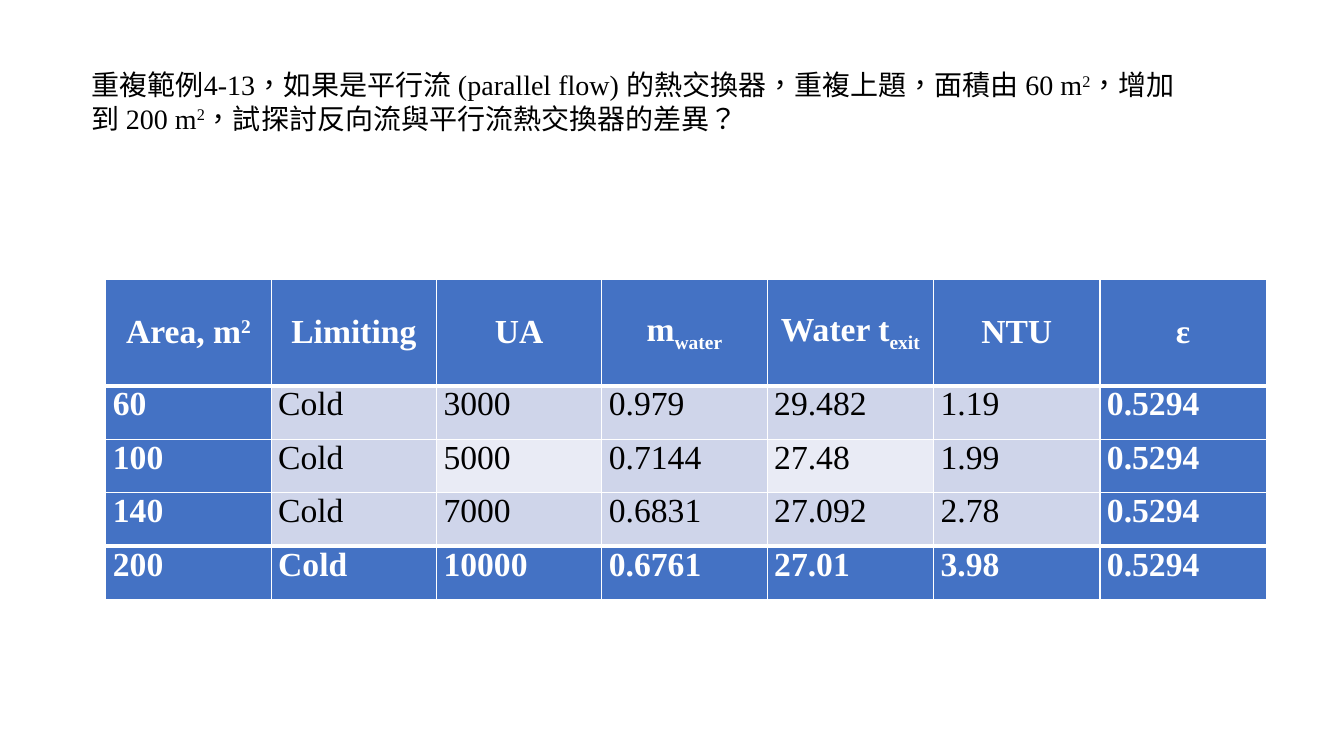
"""Build a slide comparing parallel-flow heat exchanger areas in a table."""
from dataclasses import dataclass

from lxml import etree
from pptx import Presentation
from pptx import util as u
from pptx.dml.color import RGBColor
from pptx.enum import text
from pptx.oxml.ns import qn

PX = 9144
COLORS = {"accent": "4472C4", "band": "CFD5EA", "pale": "E9EBF5",
          "white": "FFFFFF", "black": "000000"}
LATIN = "Times New Roman"
CHINESE = "Noto Sans CJK SC"
SUPER, SUB = 30000, -25000
THIN, THICK = 1, 3


@dataclass(frozen=True)
class Span:
    words: str
    face: str = LATIN
    shift: int = 0


@dataclass(frozen=True)
class Style:
    size: int
    color: str
    bold: bool = False


QUESTION = [
    Span("重複範例", CHINESE), Span("4-13"),
    Span("，如果是平行流 ", CHINESE), Span("(parallel flow) "),
    Span("的熱交換器，重複上題，面積由 ", CHINESE),
    Span("60 m"), Span("2", shift=SUPER), Span("，增加到 ", CHINESE),
    Span("200 m"), Span("2", shift=SUPER),
    Span("，試探討反向流與平行流熱交換器的差異？", CHINESE),
]
HEADINGS = [
    [Span("Area, m"), Span("2", shift=SUPER)],
    [Span("Limiting")],
    [Span("UA")],
    [Span("m"), Span("water", shift=SUB)],
    [Span("Water t"), Span("exit", shift=SUB)],
    [Span("NTU")],
    [Span("ε")],
]
RESULTS = [
    ("60", "Cold", "3000", "0.979", "29.482", "1.19", "0.5294"),
    ("100", "Cold", "5000", "0.7144", "27.48", "1.99", "0.5294"),
    ("140", "Cold", "7000", "0.6831", "27.092", "2.78", "0.5294"),
    ("200", "Cold", "10000", "0.6761", "27.01", "3.98", "0.5294"),
]
COLUMN_WIDTHS = [164] * 4 + [165] * 3
ROW_HEIGHTS = [106] + [53] * len(RESULTS)
PALE_CELLS = {(2, 2), (2, 4)}


def px(count: int) -> u.Emu:
    """Convert slide pixels to EMU."""
    return u.Emu(count * PX)


def rgb(name: str) -> RGBColor:
    """Look up a named colour."""
    return RGBColor.from_string(COLORS[name])


def write_spans(para, spans: list[Span], style: Style) -> None:
    """Add formatted runs to a paragraph."""
    for span in spans:
        run = para.add_run()
        run.text = span.words
        run.font.name = span.face
        run.font.size = u.Pt(style.size)
        run.font.bold = style.bold
        run.font.color.rgb = rgb(style.color)
        props = run.font._element
        if span.shift:
            props.set("baseline", str(span.shift))
        if span.face == CHINESE:
            props.set("lang", "zh-TW")
            etree.SubElement(props, qn("a:ea"), typeface=CHINESE)


def set_borders(cell, top: int, bottom: int) -> None:
    """Draw white cell borders with the given top and bottom widths."""
    props = cell._tc.get_or_add_tcPr()
    for side, width in (("L", THIN), ("R", THIN), ("T", top), ("B", bottom)):
        line = etree.SubElement(props, qn(f"a:ln{side}"), w=str(u.Pt(width)))
        fill = etree.SubElement(line, qn("a:solidFill"))
        etree.SubElement(fill, qn("a:srgbClr"), val=COLORS["white"])


def add_question(page) -> None:
    """Place the exercise text."""
    box = page.shapes.add_textbox(px(81), px(62), px(1114), px(77))
    frame = box.text_frame
    frame.word_wrap = True
    frame.auto_size = text.MSO_AUTO_SIZE.SHAPE_TO_FIT_TEXT
    frame.vertical_anchor = text.MSO_ANCHOR.MIDDLE
    write_spans(frame.paragraphs[0], QUESTION, Style(20, "black"))


def add_results(page) -> None:
    """Place the table of exchanger results."""
    rows = [HEADINGS] + [[[Span(value)] for value in row] for row in RESULTS]
    last_row, last_column = len(rows) - 1, len(HEADINGS) - 1
    table = page.shapes.add_table(
        len(rows), len(HEADINGS), px(105), px(277),
        px(sum(COLUMN_WIDTHS)), px(sum(ROW_HEIGHTS))).table
    table.first_row = table.horz_banding = False
    for column, width in zip(table.columns, COLUMN_WIDTHS):
        column.width = px(width)
    for row, height in zip(table.rows, ROW_HEIGHTS):
        row.height = px(height)
    for r, row in enumerate(rows):
        for c, spans in enumerate(row):
            cell = table.cell(r, c)
            strong = r in (0, last_row) or c in (0, last_column)
            set_borders(cell, THICK if r in (1, last_row) else THIN,
                        THICK if r in (0, last_row - 1) else THIN)
            cell.fill.solid()
            plain = "pale" if (r, c) in PALE_CELLS else "band"
            cell.fill.fore_color.rgb = rgb("accent" if strong else plain)
            cell.margin_left = cell.margin_right = px(7)
            cell.margin_top = cell.margin_bottom = 0
            para = cell.text_frame.paragraphs[0]
            if r == 0:
                cell.vertical_anchor = text.MSO_ANCHOR.MIDDLE
                para.alignment = text.PP_ALIGN.CENTER
            write_spans(para, spans,
                        Style(24, "white" if strong else "black", strong))


def main() -> None:
    """Build and save the deck."""
    deck = Presentation()
    deck.slide_width, deck.slide_height = px(1333), px(750)
    page = deck.slides.add_slide(deck.slide_layouts[6])
    add_question(page)
    add_results(page)
    deck.save("out.pptx")


if __name__ == "__main__":
    main()
